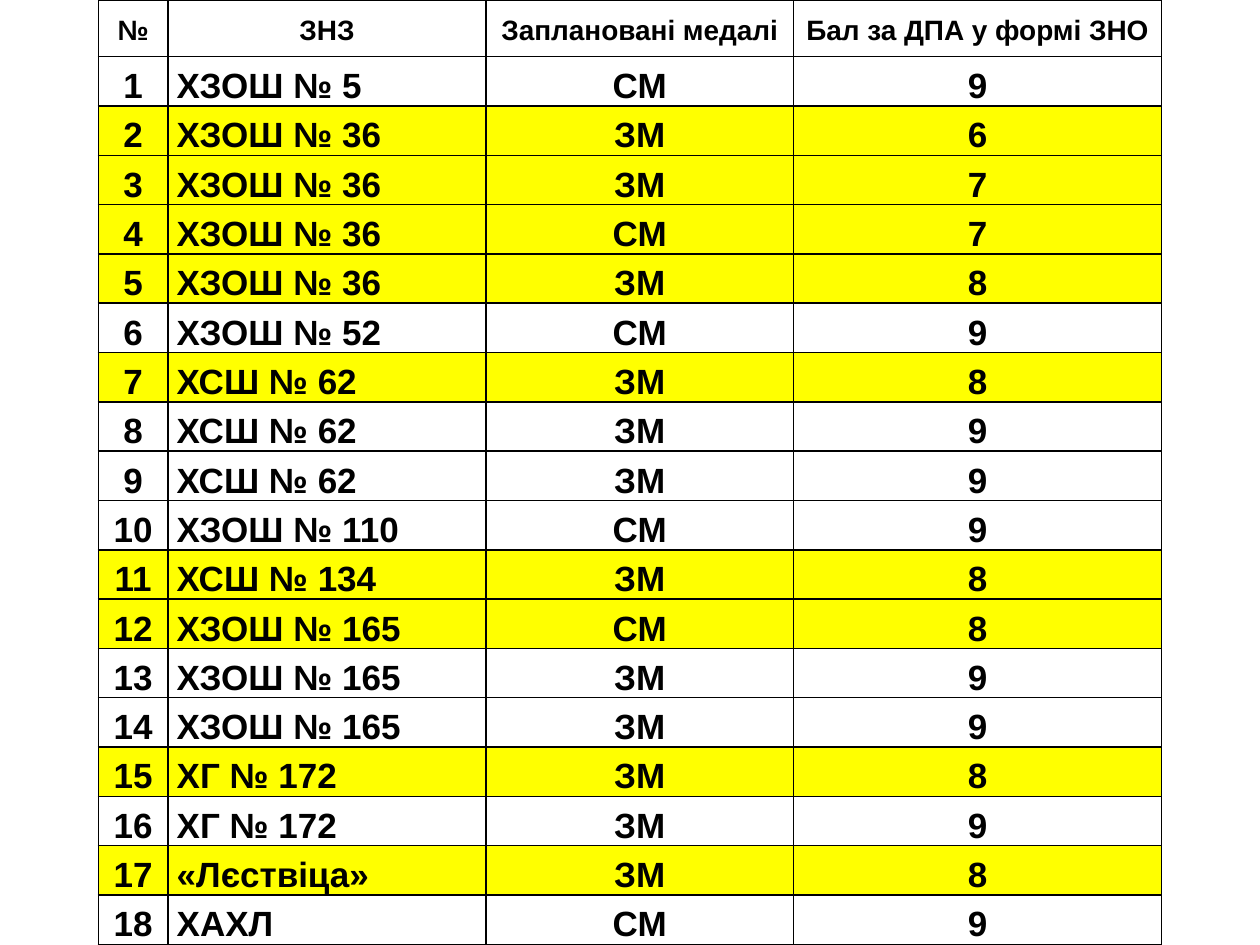
from typing import NamedTuple

from lxml.etree import SubElement
from pptx import Presentation
from pptx.dml.color import RGBColor
from pptx.enum.text import MSO_ANCHOR, PP_ALIGN
from pptx.oxml.ns import qn
from pptx.util import Pt

BLACK, WHITE, YELLOW = "000000", "FFFFFF", "FFFF00"
WIDE, HIGH = 720, 540
LEFT, HEAD = 56.25, 32.4
COLS = (39.75, 181.75, 175.75, 210.25)
PASS = 9  # lower scores are marked yellow


class Medal(NamedTuple):
    school: str
    kind: str
    score: int


class Style(NamedTuple):
    size: int
    fill: str
    anchor: MSO_ANCHOR


TITLES = ("№", "ЗНЗ", "Заплановані медалі", "Бал за ДПА у формі ЗНО")
MEDALS = (
    Medal("ХЗОШ № 5", "СМ", 9),
    Medal("ХЗОШ № 36", "ЗМ", 6),
    Medal("ХЗОШ № 36", "ЗМ", 7),
    Medal("ХЗОШ № 36", "СМ", 7),
    Medal("ХЗОШ № 36", "ЗМ", 8),
    Medal("ХЗОШ № 52", "СМ", 9),
    Medal("ХСШ № 62", "ЗМ", 8),
    Medal("ХСШ № 62", "ЗМ", 9),
    Medal("ХСШ № 62", "ЗМ", 9),
    Medal("ХЗОШ № 110", "СМ", 9),
    Medal("ХСШ № 134", "ЗМ", 8),
    Medal("ХЗОШ № 165", "СМ", 8),
    Medal("ХЗОШ № 165", "ЗМ", 9),
    Medal("ХЗОШ № 165", "ЗМ", 9),
    Medal("ХГ № 172", "ЗМ", 8),
    Medal("ХГ № 172", "ЗМ", 9),
    Medal("«Лєствіца»", "ЗМ", 8),
    Medal("ХАХЛ", "СМ", 9),
)


def color(code: str) -> RGBColor:
    return RGBColor.from_string(code)


def border(cell) -> None:
    props = cell._tc.get_or_add_tcPr()
    for side in ("lnL", "lnR", "lnT", "lnB"):
        line = SubElement(props, qn(f"a:{side}"), w=str(Pt(1)))
        fill = SubElement(line, qn("a:solidFill"))
        SubElement(fill, qn("a:srgbClr"), val=BLACK)


def write(cell, text: str, align: PP_ALIGN, style: Style) -> None:
    border(cell)
    cell.fill.solid()
    cell.fill.fore_color.rgb = color(style.fill)
    cell.margin_left = cell.margin_right = Pt(5)
    cell.margin_top = cell.margin_bottom = Pt(0)
    cell.vertical_anchor = style.anchor
    cell.text_frame.text = text
    para = cell.text_frame.paragraphs[0]
    para.alignment = align
    para.line_spacing = 1.15
    font = para.runs[0].font
    font.name, font.size, font.bold = "Arial", Pt(style.size), True
    font.color.rgb = color(BLACK)


def fill_row(table, row: int, texts: tuple, style: Style) -> None:
    for col, text in enumerate(texts):
        align = PP_ALIGN.LEFT if row and col == 1 else PP_ALIGN.CENTER
        write(table.cell(row, col), text, align, style)


def main() -> None:
    deck = Presentation()
    deck.slide_width, deck.slide_height = Pt(WIDE), Pt(HIGH)
    slide = deck.slides.add_slide(deck.slide_layouts[6])

    # Table grid
    table = slide.shapes.add_table(
        len(MEDALS) + 1, len(COLS), Pt(LEFT), Pt(0), Pt(sum(COLS)), Pt(HIGH)
    ).table
    for col, width in zip(table.columns, COLS):
        col.width = Pt(width)
    for row in table.rows:
        row.height = Pt((HIGH - HEAD) / len(MEDALS))
    table.rows[0].height = Pt(HEAD)

    # Heading and medal rows
    fill_row(table, 0, TITLES, Style(16, WHITE, MSO_ANCHOR.MIDDLE))
    for num, medal in enumerate(MEDALS, 1):
        fill = YELLOW if medal.score < PASS else WHITE
        texts = (str(num), medal.school, medal.kind, str(medal.score))
        fill_row(table, num, texts, Style(20, fill, MSO_ANCHOR.BOTTOM))

    deck.save("out.pptx")


if __name__ == "__main__":
    main()
